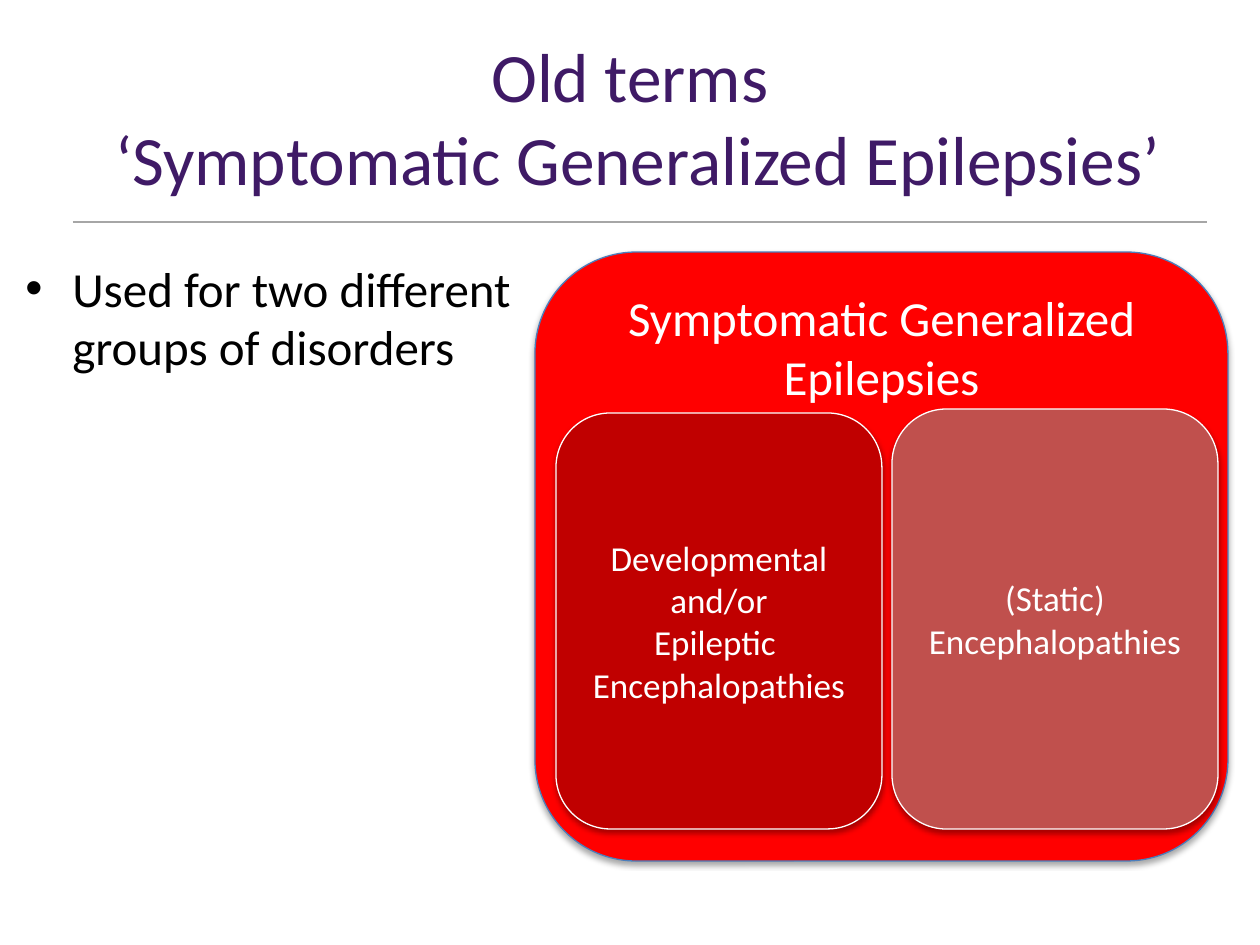
import pptx
import pptx.util
import pptx.oxml
import pptx.oxml.ns
import pptx.dml.color
import pptx.enum.shapes
import pptx.enum.text
from dataclasses import dataclass

TITLE = ["Old terms", " ‘Symptomatic Generalized Epilepsies’"]
POINT = "Used for two different groups of disorders"
GROUP = ["Symptomatic Generalized Epilepsies"]
KINDS = [
    ["Developmental", "and/or", "Epileptic ", "Encephalopathies"],
    ["(Static)", "Encephalopathies"],
]


@dataclass(frozen=True)
class Theme:
    font: str = "Calibri"
    head: str = "3F1A66"
    ink: str = "000000"
    pale: str = "FFFFFF"
    rule: str = "A6A6A6"
    outer: str = "FF0000"
    edge: str = "4B7EBC"
    inner: tuple = ("C00000", "C0504D")
    big: float = 39.6
    mid: int = 28
    small: int = 20


look = Theme()
align = pptx.enum.text.PP_ALIGN
anchor = pptx.enum.text.MSO_ANCHOR
Pt = pptx.util.Pt
NS = pptx.oxml.ns.nsdecls("a")


def px(n):
    return round(n * 914400 / 126)


def tint(code):
    return pptx.dml.color.RGBColor.from_string(code)


def write(para, text, size, color):
    run = para.add_run()
    run.text = text
    run.font.name = look.font
    run.font.size = Pt(size)
    run.font.color.rgb = tint(color)


def shade(shape):
    shape.shadow.inherit = False
    old = shape._element.spPr.find(pptx.oxml.ns.qn("a:effectLst"))
    old.append(pptx.oxml.parse_xml(
        f'<a:outerShdw {NS} blurRad="{Pt(3.1)}" dist="{Pt(1.8)}" dir="5400000" rotWithShape="0">'
        '<a:srgbClr val="000000"><a:alpha val="35000"/></a:srgbClr></a:outerShdw>'))


def panel(slide, box, fill, edge, lines, size, place):
    shape = slide.shapes.add_shape(
        pptx.enum.shapes.MSO_SHAPE.ROUNDED_RECTANGLE, *map(px, box))
    shape.fill.solid()
    shape.fill.fore_color.rgb = tint(fill)
    shape.line.color.rgb = tint(edge)
    shape.line.width = Pt(0.75)
    shade(shape)
    frame = shape.text_frame
    frame.word_wrap = True
    frame.vertical_anchor = place
    for i, text in enumerate(lines):
        para = frame.add_paragraph() if i else frame.paragraphs[0]
        para.alignment = align.CENTER
        write(para, text, size, look.pale)


def heading(slide):
    title = slide.shapes.title
    title.left, title.top, title.width, title.height = map(px, (63, 38, 1134, 157))
    frame = title.text_frame
    frame.auto_size = pptx.enum.text.MSO_AUTO_SIZE.NONE
    frame.vertical_anchor = anchor.MIDDLE
    para = frame.paragraphs[0]
    para.alignment = align.CENTER
    for i, text in enumerate(TITLE):
        if i:
            para.add_line_break()
        write(para, text, look.big, look.head)


def bullet(slide):
    frame = slide.shapes.add_textbox(*map(px, (13, 252, 545, 683))).text_frame
    frame.word_wrap = True
    para = frame.paragraphs[0]
    para.space_before = Pt(5.6)
    write(para, POINT, look.mid, look.ink)
    props = para._p.get_or_add_pPr()
    props.set("marL", str(px(47)))
    props.set("indent", str(-px(47)))
    props.append(pptx.oxml.parse_xml(f'<a:buFont {NS} typeface="Arial"/>'))
    props.append(pptx.oxml.parse_xml(f'<a:buChar {NS} char="•"/>'))


def divide(slide):
    line = slide.shapes.add_connector(
        pptx.enum.shapes.MSO_CONNECTOR.STRAIGHT, *map(px, (73, 222, 1207, 222)))
    line.line.color.rgb = tint(look.rule)
    line.line.width = Pt(1)
    line._element.spPr.append(pptx.oxml.parse_xml(f"<a:effectLst {NS}/>"))


def main():
    deck = pptx.Presentation()
    deck.slide_width, deck.slide_height = px(1260), px(945)
    slide = deck.slides.add_slide(deck.slide_layouts[5])
    heading(slide)
    bullet(slide)
    panel(slide, (535, 252, 693, 609), look.outer, look.edge, GROUP, look.mid, anchor.TOP)
    base, wide, step = 829, 326, 336
    for i, (lines, fill, top) in enumerate(zip(KINDS, look.inner, (413, 409))):
        box = (556 + i * step, top, wide, base - top)
        panel(slide, box, fill, look.pale, lines, look.small, anchor.MIDDLE)
    divide(slide)
    deck.save("out.pptx")


if __name__ == "__main__":
    main()
